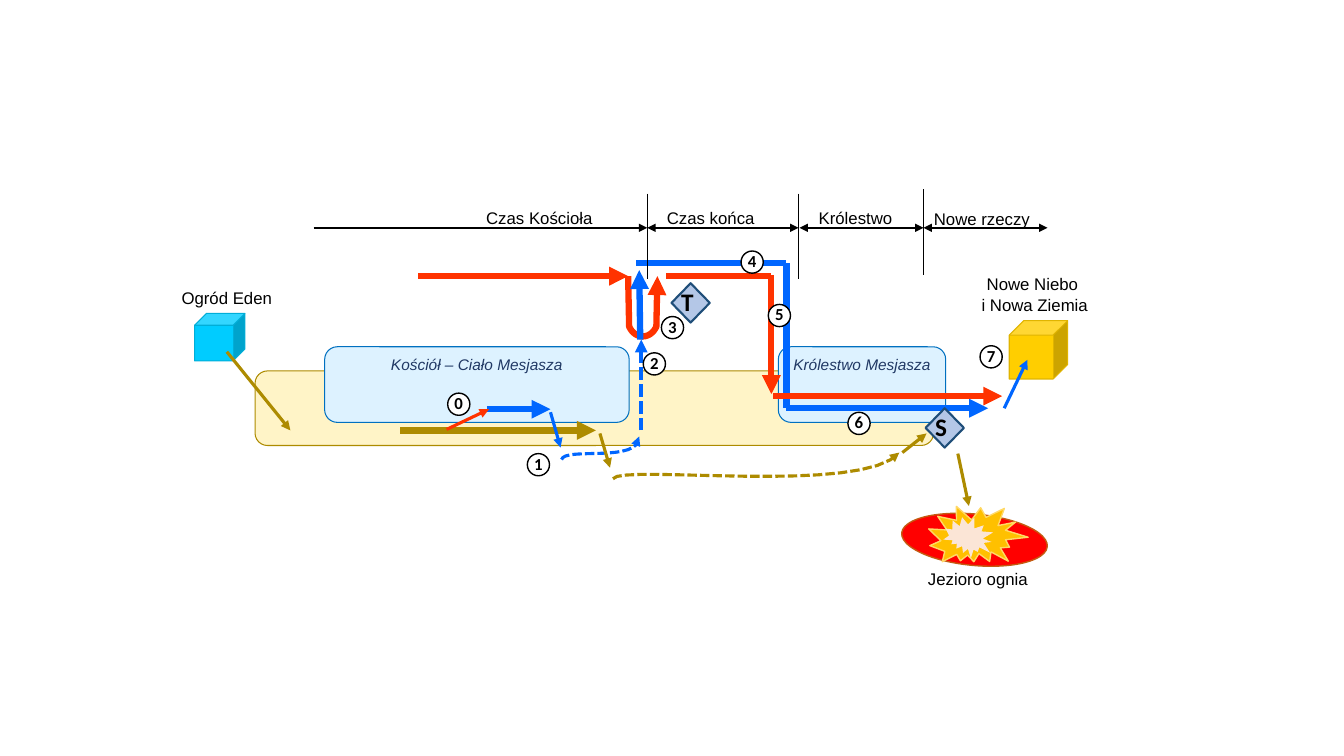
from lxml.etree import SubElement
from pptx import Presentation
from pptx.dml.color import RGBColor
from pptx.enum.dml import MSO_LINE
from pptx.enum.shapes import MSO_CONNECTOR, MSO_SHAPE as SHAPE
from pptx.enum.text import MSO_ANCHOR as ANCHOR, PP_ALIGN as ALIGN
from pptx.oxml.ns import qn
from pptx.util import Inches, Pt

BLACK = RGBColor(0, 0, 0)
WHITE = RGBColor(0xFF, 0xFF, 0xFF)
NAVY = RGBColor(0x20, 0x38, 0x64)
OLIVE = RGBColor(0xAD, 0x8B, 0x00)
RED = RGBColor(0xFF, 0x33, 0x00)
BLUE = RGBColor(0x00, 0x66, 0xFF)
CREAM = RGBColor(0xFF, 0xF4, 0xC7)
PALE_BLUE = RGBColor(0xDD, 0xF2, 0xFF)
PANEL_EDGE = RGBColor(0x00, 0x70, 0xC0)
GOLD = RGBColor(0xFF, 0xCE, 0x00)
GOLD_EDGE = RGBColor(0xE0, 0xB4, 0x00)
CYAN = RGBColor(0x00, 0xCC, 0xFF)
CYAN_EDGE = RGBColor(0x00, 0xAE, 0xD8)
DIAMOND_FILL = RGBColor(0xB4, 0xC7, 0xE7)
DIAMOND_EDGE = RGBColor(0x1F, 0x4E, 0x79)
LAKE_RED = RGBColor(0xFF, 0x00, 0x00)
LAKE_EDGE = RGBColor(0xC5, 0x5A, 0x11)
FLAME = RGBColor(0xFF, 0xC0, 0x00)
FLAME_EDGE = RGBColor(0xFF, 0xD9, 0x66)
FLAME_CORE = RGBColor(0xFB, 0xE5, 0xD6)

presentation = Presentation()
presentation.slide_width = Inches(13.33)
presentation.slide_height = Inches(7.5)
slide = presentation.slides.add_slide(presentation.slide_layouts[6])


def add_block(kind, box, fill=None, edge=None, width=0.75, rotation=0, text="",
              size=12, font="Arial", color=BLACK, bold=False, italic=False,
              align=ALIGN.CENTER, anchor=ANCHOR.MIDDLE, wrap=True,
              margins=(0.03, 0.03), spacing=None):
    """Add a preset shape, or a text box when kind is None, with its text."""
    lengths = [Inches(value) for value in box]
    if kind is None:
        shape = slide.shapes.add_textbox(*lengths)
    else:
        shape = slide.shapes.add_shape(kind, *lengths)
        shape.shadow.inherit = False
        shape.rotation = rotation
        shape.fill.solid()
        shape.fill.fore_color.rgb = fill
        if edge is None:
            shape.line.fill.background()
        else:
            shape.line.color.rgb = edge
            shape.line.width = Pt(width)
    if not text:
        return
    frame = shape.text_frame
    frame.word_wrap = wrap
    frame.vertical_anchor = anchor
    frame.margin_left = frame.margin_right = Inches(margins[0])
    frame.margin_top = frame.margin_bottom = Inches(margins[1])
    frame.text = text
    paragraph = frame.paragraphs[0]
    paragraph.alignment = align
    paragraph.line_spacing = spacing
    for run in paragraph.runs:
        run.font.size = Pt(size)
        run.font.name = font
        run.font.color.rgb = color
        run.font.bold = bold
        run.font.italic = italic


def bezier(start, first, second, end, steps=16):
    """Return points along a cubic curve."""
    return [tuple((1 - t) ** 3 * a + 3 * (1 - t) ** 2 * t * b
                  + 3 * (1 - t) * t ** 2 * c + t ** 3 * d
                  for a, b, c, d in zip(start, first, second, end))
            for t in (step / steps for step in range(steps + 1))]


# Background panels
add_block(SHAPE.ROUNDED_RECTANGLE, (2.53, 3.68, 6.73, 0.74), CREAM, OLIVE)
for box, title in [((7.72, 3.44, 1.66, 0.75), "Królestwo Mesjasza"),
                   ((3.22, 3.44, 3.02, 0.75), "Kościół – Ciało Mesjasza")]:
    add_block(SHAPE.ROUNDED_RECTANGLE, box, PALE_BLUE, PANEL_EDGE, text=title,
              size=11, color=NAVY, italic=True, anchor=ANCHOR.TOP, wrap=False,
              margins=(0.1, 0.05))

# Cubes: new earth and Eden
add_block(SHAPE.CUBE, (10.01, 3.18, 0.58, 0.58), GOLD, GOLD_EDGE)
add_block(SHAPE.CUBE, (1.93, 3.11, 0.5, 0.47), CYAN, CYAN_EDGE)

# Routes: points, colour, width, arrowheads, dashed
u_turn = [(6.23, 2.74), *bezier((6.24, 3.24), (6.3, 3.37), (6.45, 3.37), (6.51, 3.24)),
          (6.52, 2.74)]
blue_curve = bezier((5.57, 4.56), (5.6, 4.43), (6.35, 4.6), (6.34, 4.33))
olive_curve = bezier((6.08, 4.75), (6.15, 4.6), (8.57, 4.92), (8.92, 4.49))
END = ["tailEnd"]
BOTH = ["headEnd", "tailEnd"]
routes = [
    ([(3.97, 4.27), (5.91, 4.27)], OLIVE, 4.5, END, False),
    ([(4.15, 2.74), (6.23, 2.74)], RED, 4.5, END, False),
    ([(4.83, 4.06), (5.46, 4.06)], BLUE, 4.5, END, False),
    ([(6.31, 2.61), (7.8, 2.61)], BLUE, 4.5, [], False),
    (u_turn, RED, 4.5, END, False),
    ([(7.65, 2.73), (7.65, 3.91)], RED, 4.5, END, False),
    ([(6.61, 2.74), (7.65, 2.74)], RED, 4.5, [], False),
    ([(7.8, 2.61), (7.8, 4.05)], BLUE, 4.5, [], False),
    ([(7.67, 3.93), (9.94, 3.93)], RED, 4.5, END, False),
    ([(7.8, 4.05), (9.8, 4.05)], BLUE, 4.5, END, False),
    (blue_curve, BLUE, 2.25, END, True),
    ([(6.35, 3.37), (6.34, 2.68)], BLUE, 4.5, END, False),
    ([(6.36, 4.27), (6.36, 3.37)], BLUE, 3, END, True),
    (olive_curve, OLIVE, 2.25, END, True),
    ([(8.95, 4.49), (9.19, 4.3)], OLIVE, 2.25, END, False),
    ([(5.95, 4.3), (6.05, 4.64)], OLIVE, 2.25, END, False),
    ([(5.46, 4.09), (5.56, 4.44)], BLUE, 2.25, END, False),
    ([(9.5, 4.5), (9.61, 5.02)], OLIVE, 2.25, END, False),
    ([(9.96, 4.05), (10.19, 3.57)], BLUE, 2.25, END, False),
    ([(4.43, 4.26), (4.85, 4.06)], RED, 2.25, END, False),
    ([(2.25, 3.49), (2.88, 4.27)], OLIVE, 2.25, END, False),
]
# Timeline spans and the dividers between them
for left, right, heads in [(3.11, 6.42, END), (6.42, 7.92, BOTH),
                           (7.93, 9.16, BOTH), (9.16, 10.39, BOTH)]:
    routes.append(([(left, 2.26), (right, 2.26)], BLACK, 1.5, heads, False))
for x, top in [(6.42, 1.92), (7.92, 1.92), (9.16, 1.88)]:
    routes.append(([(x, top), (x, top + 0.85)], BLACK, 0.5, [], False))

for points, color, width, heads, dashed in routes:
    corners = [(Inches(x), Inches(y)) for x, y in points]
    if len(corners) == 2:
        route = slide.shapes.add_connector(MSO_CONNECTOR.STRAIGHT, *corners[0], *corners[1])
    else:
        builder = slide.shapes.build_freeform(*corners[0])
        builder.add_line_segments(corners[1:], close=False)
        route = builder.convert_to_shape()
        route.fill.background()
    route.line.color.rgb = color
    route.line.width = Pt(width)
    if dashed:
        route.line.dash_style = MSO_LINE.SQUARE_DOT
    properties = route._element.spPr
    for head in heads:
        SubElement(properties.find(qn("a:ln")), qn(f"a:{head}"), type="triangle")
    SubElement(properties, qn("a:effectLst"))

# Lake of fire
add_block(SHAPE.FLOWCHART_CONNECTOR, (8.94, 5.1, 1.45, 0.51), LAKE_RED, LAKE_EDGE, 1, 5.4)
add_block(SHAPE.EXPLOSION2, (9.21, 4.98, 0.97, 0.68), FLAME, FLAME_EDGE, 1, 16.2)
add_block(SHAPE.EXPLOSION2, (9.38, 5.11, 0.47, 0.45), FLAME_CORE, rotation=56.2)

# Lettered diamonds and numbered stages
for letter, left, top in [("T", 6.66, 2.81), ("S", 9.18, 4.05)]:
    add_block(SHAPE.DIAMOND, (left, top, 0.38, 0.39), DIAMOND_FILL, DIAMOND_EDGE, 1.5,
              text=letter, size=18, font="Calibri", bold=True, align=ALIGN.LEFT,
              margins=(0, 0.04), spacing=0.9)
stages = [(4.44, 3.9), (5.23, 4.5), (6.38, 3.5), (6.56, 3.14),
          (7.35, 2.49), (7.62, 3.02), (8.41, 4.09), (9.72, 3.43)]
for number, (left, top) in enumerate(stages):
    add_block(SHAPE.OVAL, (left, top, 0.22, 0.22), WHITE, BLACK, 1, text=str(number),
              font="Calibri", bold=True, wrap=False, margins=(0.1, 0.05), spacing=0.9)

# Labels
for label, box in [
    ("Czas Kościoła", (4.63, 2.03, 1.44, 0.26)),
    ("Czas końca", (6.48, 2.03, 1.14, 0.26)),
    ("Królestwo", (8.02, 2.03, 0.93, 0.26)),
    ("Nowe rzeczy", (9.16, 2.04, 1.16, 0.26)),
    ("Jezioro ognia", (8.98, 5.61, 1.44, 0.26)),
    ("Ogród Eden", (1.53, 2.82, 1.44, 0.26)),
    ("Nowe Niebo\v i Nowa Ziemia", (9.52, 2.69, 1.44, 0.46)),
]:
    add_block(None, box, text=label)

presentation.save("out.pptx")
